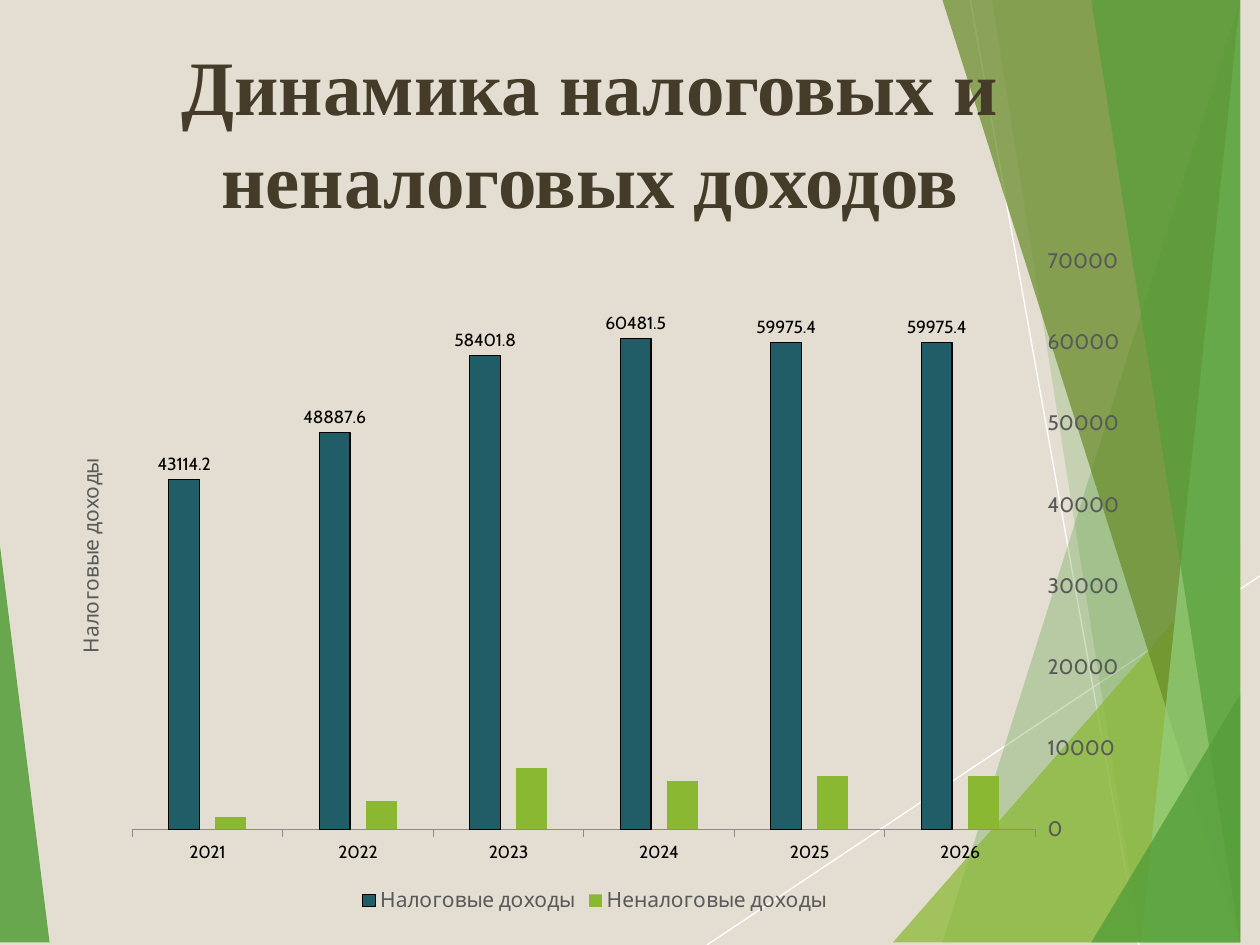
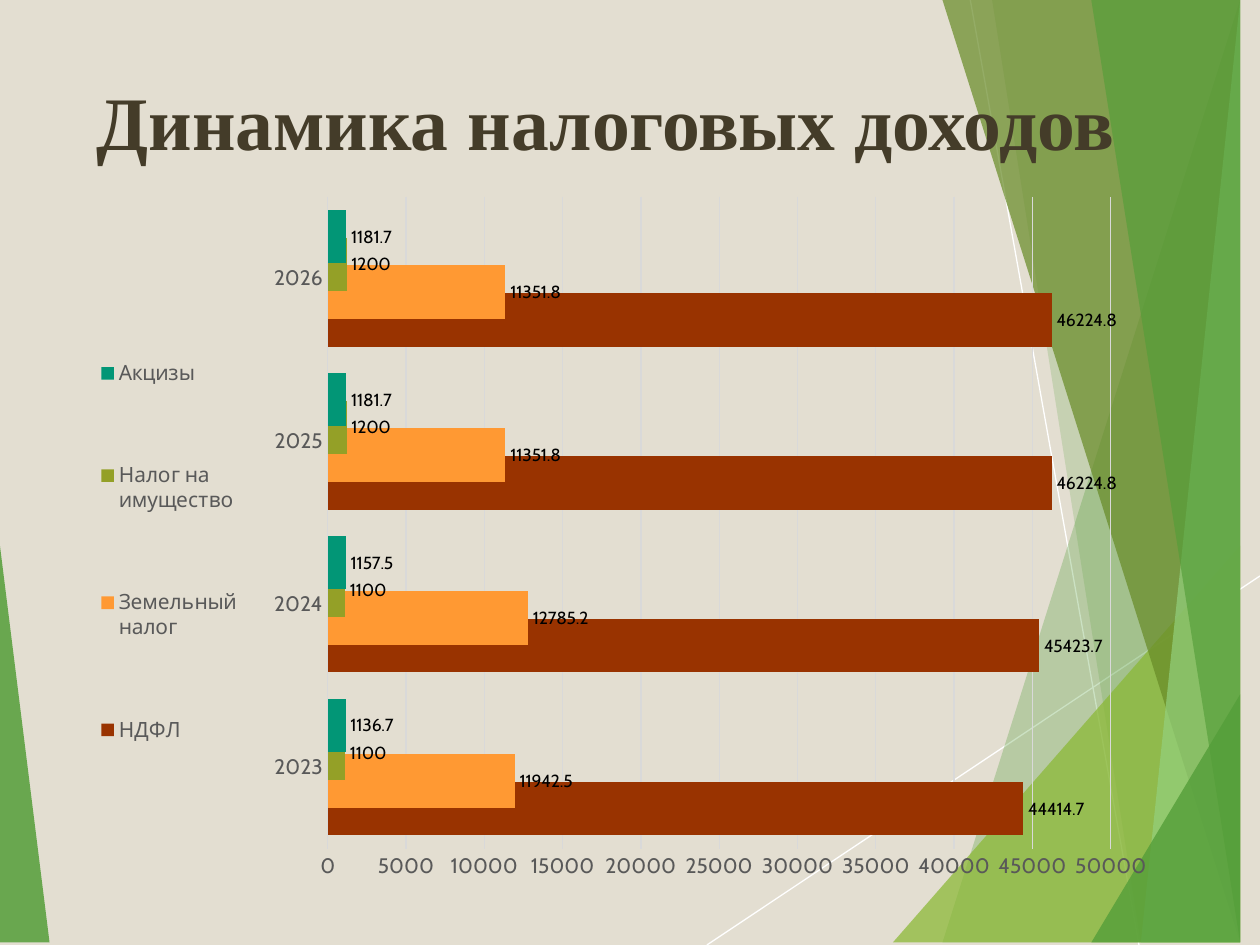
from lxml.etree import SubElement
from pptx import Presentation
from pptx.chart.data import CategoryChartData
from pptx.dml.color import RGBColor
from pptx.enum.chart import (XL_CHART_TYPE, XL_LABEL_POSITION, XL_LEGEND_POSITION,
                             XL_TICK_LABEL_POSITION, XL_TICK_MARK)
from pptx.enum.shapes import MSO_CONNECTOR
from pptx.enum.text import MSO_ANCHOR, PP_ALIGN
from pptx.oxml.ns import qn
from pptx.util import Cm, Pt

WIDTH, HEIGHT = 25.4, 19.05
BACKGROUND, TITLE_COLOR = "E3DED1", "443C29"
BLACK, WHITE, GREY, AXIS_GREY, GRID_GREY = "000000", "FFFFFF", "595959", "8B8B8B", "D9D9D9"
GREEN, LIME, OLIVE, MINT = "549E39", "8AB833", "678A26", "93D07D"
TITLE_FONT, CHART_FONT = "Times New Roman", "Cabin"

# Thin rays: start and end points in cm
RAYS = [((14.25, HEIGHT), (WIDTH, 11.61)), ((19.56, 0), (22.96, HEIGHT))]

# Translucent facets, back to front: colour, opacity in percent, corners in cm
FACETS = [
    (GREEN, 85, [(0, 11.15), (1.24, HEIGHT), (0, HEIGHT)]),
    (GREEN, 30, [(24.77, 0), (19.15, HEIGHT), (WIDTH, HEIGHT), (WIDTH, 0)]),
    (GREEN, 20, [(20.02, 0), (23.34, HEIGHT), (WIDTH, HEIGHT), (WIDTH, 0)]),
    (LIME, 72, [(18.44, HEIGHT), (WIDTH, 10.9), (WIDTH, HEIGHT)]),
    (OLIVE, 70, [(19.48, 0), (24.64, HEIGHT), (WIDTH, HEIGHT), (WIDTH, 0)]),
    (MINT, 70, [(24.92, 0), (23.04, HEIGHT), (WIDTH, HEIGHT), (WIDTH, 0)]),
    (GREEN, 65, [(22.43, 0), (25.04, HEIGHT), (WIDTH, HEIGHT), (25.35, 0)]),
    (GREEN, 80, [(22.38, HEIGHT), (WIDTH, 13.59), (WIDTH, HEIGHT)]),
]


def rgb(color):
    return RGBColor.from_string(color)


def style_font(font, size, color, name=CHART_FONT, bold=False):
    font.size, font.name, font.bold = Pt(size), name, bold
    font.color.rgb = rgb(color)


def style_line(line, color, width=0.75):
    line.color.rgb = rgb(color)
    line.width = Pt(width)


def add_backdrop(page):
    """Background, rays and facets shared by every page."""
    page.background.fill.solid()
    page.background.fill.fore_color.rgb = rgb(BACKGROUND)
    for start, end in RAYS:
        ray = page.shapes.add_connector(
            MSO_CONNECTOR.STRAIGHT, *[Cm(value) for value in start + end])
        style_line(ray.line, WHITE)
        SubElement(ray._element.spPr, qn("a:effectLst"))
    for color, opacity, corners in FACETS:
        builder = page.shapes.build_freeform(*corners[0], scale=Cm(1))
        builder.add_line_segments(corners[1:], close=True)
        facet = builder.convert_to_shape()
        facet.shadow.inherit = False
        facet.line.fill.background()
        facet.fill.solid()
        facet.fill.fore_color.rgb = rgb(color)
        tint = facet._element.spPr.find(qn("a:solidFill"))[0]
        SubElement(tint, qn("a:alpha"), val=str(opacity * 1000))


def add_title(page, box, text, size, align):
    frame = page.shapes.add_textbox(*[Cm(value) for value in box]).text_frame
    frame.word_wrap = True
    frame.vertical_anchor = MSO_ANCHOR.MIDDLE
    frame.text = text
    para = frame.paragraphs[0]
    para.alignment = align
    style_font(para.runs[0].font, size, TITLE_COLOR, TITLE_FONT, bold=True)


def set_layout(layout, box, inner=False):
    """Place a plot area or legend by fractions of the chart."""
    for child in list(layout):
        layout.remove(child)
    manual = SubElement(layout, qn("c:manualLayout"))
    if inner:
        SubElement(manual, qn("c:layoutTarget"), val="inner")
    for side in "xy":
        SubElement(manual, qn(f"c:{side}Mode"), val="edge")
    for side, value in zip("xywh", box):
        SubElement(manual, qn(f"c:{side}"), val=str(value))


def add_bar_chart(page, box, kind, years, series_list, gap, overlap, plot_box, legend_position):
    """Clustered chart; each series is (name, values, colour, shows labels)."""
    data = CategoryChartData()
    data.categories = years
    for name, values, _, _ in series_list:
        data.add_series(name, values)
    chart = page.shapes.add_chart(kind, *[Cm(value) for value in box], data).chart
    style_font(chart.font, 10, BLACK)
    chart.has_title = False

    # Bars and their values
    plot = chart.plots[0]
    plot.vary_by_categories = False
    plot.gap_width, plot.overlap = gap, overlap
    for series, (_, _, color, labelled) in zip(plot.series, series_list):
        series.format.fill.solid()
        series.format.fill.fore_color.rgb = rgb(color)
        if labelled:
            labels = series.data_labels
            labels.show_value = True
            labels.position = XL_LABEL_POSITION.OUTSIDE_END
            style_font(labels.font, 10, BLACK)

    # Axes
    axis = chart.value_axis
    axis.major_tick_mark = chart.category_axis.major_tick_mark = XL_TICK_MARK.NONE
    axis.format.line.fill.background()
    style_font(axis.tick_labels.font, 12, GREY)

    # Legend and plot area
    chart.has_legend = True
    chart.legend.position = legend_position
    chart.legend.include_in_layout = False
    style_font(chart.legend.font, 12, GREY)
    area = chart._chartSpace.chart.plotArea
    layout = area.find(qn("c:layout"))
    if layout is None:
        layout = SubElement(area, qn("c:layout"))
        area.insert(0, layout)
    set_layout(layout, plot_box, inner=True)
    return chart


def build_revenue_page(page):
    add_backdrop(page)
    add_title(page, (1.7, 0.74, 20.4, 3.81),
              "Динамика налоговых и неналоговых доходов", 44, PP_ALIGN.CENTER)
    years = [str(year) for year in range(2021, 2027)]
    revenue = [
        ("Налоговые доходы", (43114.2, 48887.6, 58401.8, 60481.5, 59975.4, 59975.4),
         "215D66", True),
        ("Неналоговые доходы", (1500, 3500, 7500, 6000, 6500, 6500), LIME, False),
    ]
    chart = add_bar_chart(page, (0.89, 4.72, 22.2, 13.79), XL_CHART_TYPE.COLUMN_CLUSTERED,
                          years, revenue, 238, -52, (0.08, 0.04, 0.82, 0.83),
                          XL_LEGEND_POSITION.BOTTOM)
    style_line(chart.plots[0].series[0].format.line, BLACK)
    chart.category_axis.major_tick_mark = XL_TICK_MARK.OUTSIDE
    style_line(chart.category_axis.format.line, AXIS_GREY)

    # Scale on the right, its title on the left
    axis = chart.value_axis
    axis.has_major_gridlines = False
    axis.minimum_scale, axis.maximum_scale, axis.major_unit = 0, 70000, 10000
    axis.tick_label_position = XL_TICK_LABEL_POSITION.HIGH
    frame = axis.axis_title.text_frame
    frame.text = "Налоговые доходы"
    style_font(frame.paragraphs[0].runs[0].font, 12, GREY)


def build_tax_page(page):
    add_backdrop(page)
    add_title(page, (1.7, 1.32, 22.61, 2.21), "Динамика налоговых доходов", 43.2, PP_ALIGN.LEFT)
    years = [str(year) for year in range(2023, 2027)]
    taxes = [
        ("НДФЛ", (44414.7, 45423.7, 46224.8, 46224.8), "993300", True),
        ("Земельный налог", (11942.5, 12785.2, 11351.8, 11351.8), "FF9933", True),
        ("Налог на имущество", (1100, 1100, 1200, 1200), "94A027", True),
        ("Акцизы", (1136.7, 1157.5, 1181.7, 1181.7), "029676", True),
    ]
    chart = add_bar_chart(page, (1.7, 3.53, 21.41, 14.6), XL_CHART_TYPE.BAR_CLUSTERED,
                          years, taxes, 49, 48, (0.23, 0.03, 0.74, 0.9),
                          XL_LEGEND_POSITION.LEFT)
    style_font(chart.category_axis.tick_labels.font, 12, GREY)
    style_line(chart.category_axis.format.line, GRID_GREY)
    style_line(chart.value_axis.major_gridlines.format.line, GRID_GREY)

    # Tall legend beside the bars
    legend = chart.legend._element
    layout = legend.find(qn("c:layout"))
    if layout is None:
        layout = SubElement(legend, qn("c:layout"))
        legend.find(qn("c:legendPos")).addnext(layout)
    set_layout(layout, (0, 0.15, 0.16, 0.74))


def main():
    deck = Presentation()
    deck.slide_width, deck.slide_height = Cm(WIDTH), Cm(HEIGHT)
    for build_page in (build_revenue_page, build_tax_page):
        build_page(deck.slides.add_slide(deck.slide_layouts[6]))
    deck.save("out.pptx")


if __name__ == "__main__":
    main()
